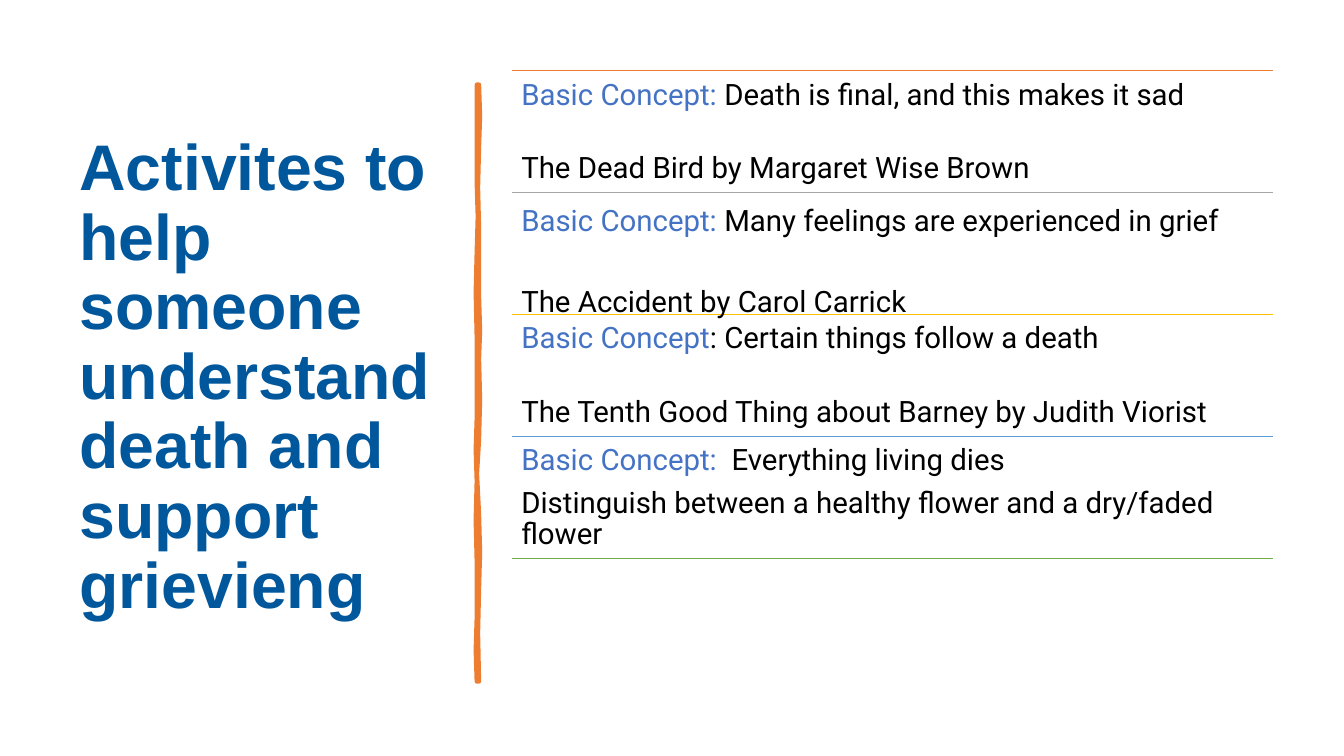
from lxml import etree
from pptx import Presentation
from pptx.dml.color import RGBColor
from pptx.enum.shapes import MSO_CONNECTOR
from pptx.enum.text import MSO_ANCHOR
from pptx.oxml.ns import qn
from pptx.util import Pt

STRAIGHT = MSO_CONNECTOR.STRAIGHT
TOP, MIDDLE = MSO_ANCHOR.TOP, MSO_ANCHOR.MIDDLE

EMU_PER_PX = 9144  # 100 px to the inch

NAVY = RGBColor(0x00, 0x57, 0x9C)
BLUE = RGBColor(0x44, 0x72, 0xC4)
BLACK = RGBColor(0x00, 0x00, 0x00)
ORANGE = RGBColor(0xED, 0x7D, 0x31)
GRAY = RGBColor(0xA5, 0xA5, 0xA5)
GOLD = RGBColor(0xFF, 0xC0, 0x00)
SKY = RGBColor(0x5B, 0x9B, 0xD5)
GREEN = RGBColor(0x70, 0xAD, 0x47)

TITLE = "Activites to help someone understand death and support grievieng"

ROWS_LEFT, ROWS_TOP, ROW_WIDTH, ROW_HEIGHT = 508, 70, 755, 121
RULE_COLORS = [ORANGE, GRAY, GOLD, SKY, GREEN]

# label, concept, activity, line spacing, points between the paragraphs
CONCEPTS = [
    ("Basic Concept: ", "Death is final, and this makes it sad",
     "The Dead Bird by Margaret Wise Brown", 0.9, 30),
    ("Basic Concept: ", "Many feelings are experienced in grief",
     "The Accident by Carol Carrick", 1.0, 33),
    ("Basic Concept", ": Certain things follow a death",
     "The Tenth Good Thing about Barney by Judith Viorist", 0.9, 30),
    ("Basic Concept:  ", "Everything living dies",
     "Distinguish between a healthy flower and a dry/faded flower", 0.9, 7.5),
]

# Outline of the brush stroke: down its right edge, up its left edge
BRUSH_STROKE = [
    (475, 84), (476, 115), (475, 146), (474, 186), (475, 226), (475, 294),
    (476, 328), (475, 356), (476, 396), (475, 436), (473, 470), (475, 510),
    (476, 548), (475, 584), (474, 628), (475, 676),
    (473, 676), (472, 645), (473, 613), (473, 557), (472, 516), (473, 477),
    (472, 446), (473, 415), (473, 335), (472, 290), (473, 250), (474, 215),
    (473, 181), (473, 84),
]


def px(length):
    return length * EMU_PER_PX


def add_text_frame(slide, left, top, width, height, inset_x, inset_y, anchor):
    box = slide.shapes.add_textbox(px(left), px(top), px(width), px(height))
    frame = box.text_frame
    frame.word_wrap = True
    frame.vertical_anchor = anchor
    frame.margin_left = frame.margin_right = px(inset_x)
    frame.margin_top = frame.margin_bottom = px(inset_y)
    return frame


def style_paragraph(paragraph, font_name, size, line_spacing):
    paragraph.line_spacing = line_spacing
    paragraph.font.name = font_name
    paragraph.font.size = Pt(size)


def add_title(slide):
    frame = add_text_frame(slide, 69, 70, 374, 611, 10, 5, MIDDLE)
    paragraph = frame.paragraphs[0]
    paragraph.text = TITLE
    style_paragraph(paragraph, "Arial", 46, 0.9)
    paragraph.font.bold = True
    paragraph.font.color.rgb = NAVY


def add_brush_stroke(slide):
    builder = slide.shapes.build_freeform(*BRUSH_STROKE[0], scale=EMU_PER_PX)
    builder.add_line_segments(BRUSH_STROKE[1:], close=True)
    stroke = builder.convert_to_shape()
    stroke.shadow.inherit = False
    stroke.fill.solid()
    stroke.fill.fore_color.rgb = ORANGE
    stroke.line.color.rgb = ORANGE
    stroke.line.width = Pt(3.25)


def add_rule(slide, top, color):
    rule = slide.shapes.add_connector(
        STRAIGHT, px(ROWS_LEFT), px(top), px(ROWS_LEFT + ROW_WIDTH), px(top))
    rule.line.color.rgb = color
    rule.line.width = Pt(1)
    etree.SubElement(rule._element.spPr, qn("a:effectLst"))


def add_concept(slide, top, label, concept, activity, line_spacing, gap):
    frame = add_text_frame(slide, ROWS_LEFT, top, ROW_WIDTH, ROW_HEIGHT, 9, 9, TOP)
    heading = frame.paragraphs[0]
    for text, color in ((label, BLUE), (concept, BLACK)):
        run = heading.add_run()
        run.text = text
        run.font.color.rgb = color
    heading.space_after = Pt(gap)
    style_paragraph(heading, "Roboto", 21, line_spacing)

    detail = frame.add_paragraph()
    detail.text = activity
    style_paragraph(detail, "Roboto", 21, line_spacing)
    detail.font.color.rgb = BLACK


def main():
    presentation = Presentation()
    presentation.slide_width = px(1333)
    presentation.slide_height = px(750)
    slide = presentation.slides.add_slide(presentation.slide_layouts[6])

    add_title(slide)
    add_brush_stroke(slide)
    for index, color in enumerate(RULE_COLORS):
        add_rule(slide, ROWS_TOP + index * ROW_HEIGHT, color)
    for index, concept in enumerate(CONCEPTS):
        add_concept(slide, ROWS_TOP + index * ROW_HEIGHT, *concept)

    presentation.save("out.pptx")


if __name__ == "__main__":
    main()
